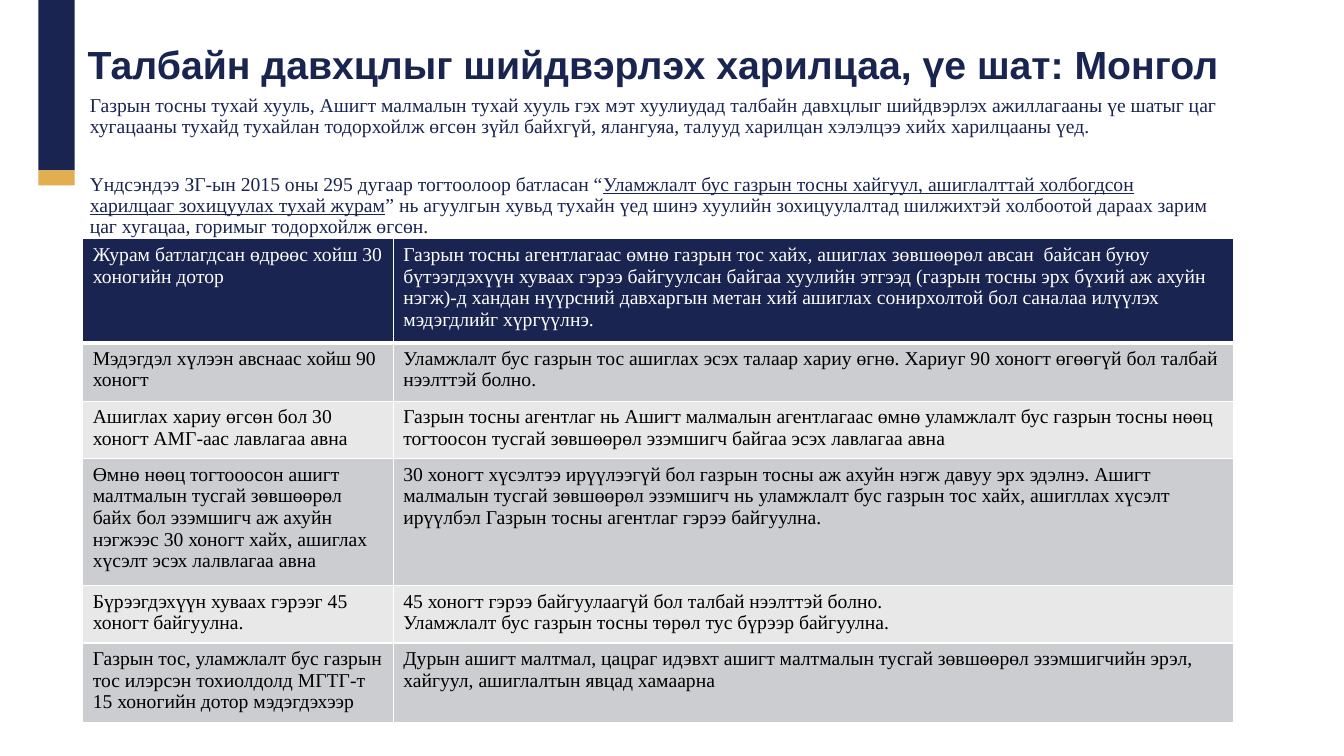
from dataclasses import dataclass

from lxml import etree
from pptx import Presentation
from pptx import util as u
from pptx.dml.color import RGBColor
from pptx.enum import shapes, text
from pptx.oxml import ns


@dataclass(frozen=True)
class Theme:
    navy: str = "192450"
    gold: str = "E3AE50"
    white: str = "FFFFFF"
    black: str = "000000"
    bands: tuple = ("CCCDD0", "E8E8E9")
    heading_font: str = "Arial"
    body_font: str = "Times New Roman"
    heading_size: int = 28
    body_size: int = 14


THEME = Theme()

TITLE = "Талбайн давхцлыг шийдвэрлэх харилцаа, үе шат: Монгол"
INTRO = [
    [("Газрын тосны тухай хууль, Ашигт малмалын тухай хууль гэх мэт хуулиудад талбайн давхцлыг шийдвэрлэх ажиллагааны үе шатыг цаг хугацааны тухайд тухайлан тодорхойлж өгсөн зүйл байхгүй, ялангуяа, талууд харилцан хэлэлцээ хийх харилцааны үед.", False)],
    [("Үндсэндээ ЗГ-ын 2015 оны 295 дугаар тогтоолоор батласан “", False),
     ("Уламжлалт бус газрын тосны хайгуул, ашиглалттай холбогдсон харилцааг зохицуулах тухай журам", True),
     ("” нь агуулгын хувьд тухайн үед шинэ хуулийн зохицуулалтад шилжихтэй холбоотой дараах зарим цаг хугацаа, горимыг тодорхойлж өгсөн.", False)],
]
STAGES = [
    (1.03, "Журам батлагдсан өдрөөс хойш 30 хоногийн дотор",
     ["Газрын тосны агентлагаас өмнө газрын тос хайх, ашиглах зөвшөөрөл авсан  байсан буюу бүтээгдэхүүн хуваах гэрээ байгуулсан байгаа хуулийн этгээд (газрын тосны эрх бүхий аж ахуйн нэгж)-д хандан нүүрсний давхаргын метан хий ашиглах сонирхолтой бол саналаа илүүлэх мэдэгдлийг хүргүүлнэ."]),
    (0.58, "Мэдэгдэл хүлээн авснаас хойш 90 хоногт",
     ["Уламжлалт бус газрын тос ашиглах эсэх талаар хариу өгнө. Хариуг 90 хоногт өгөөгүй бол талбай нээлттэй болно."]),
    (0.57, "Ашиглах хариу өгсөн бол 30 хоногт АМГ-аас лавлагаа авна",
     ["Газрын тосны агентлаг нь Ашигт малмалын агентлагаас өмнө уламжлалт бус газрын тосны нөөц тогтоосон тусгай зөвшөөрөл эзэмшигч байгаа эсэх лавлагаа авна"]),
    (1.26, "Өмнө нөөц тогтооосон ашигт малтмалын тусгай зөвшөөрөл байх бол эзэмшигч аж ахуйн нэгжээс 30 хоногт хайх, ашиглах хүсэлт эсэх лалвлагаа авна",
     ["30 хоногт хүсэлтээ ирүүлээгүй бол газрын тосны аж ахуйн нэгж давуу эрх эдэлнэ. Ашигт малмалын тусгай зөвшөөрөл эзэмшигч нь уламжлалт бус газрын тос хайх, ашигллах хүсэлт ирүүлбэл Газрын тосны агентлаг гэрээ байгуулна."]),
    (0.57, "Бүрээгдэхүүн хуваах гэрээг 45 хоногт байгуулна.",
     ["45 хоногт гэрээ байгуулаагүй бол талбай нээлттэй болно.",
      "Уламжлалт бус газрын тосны төрөл тус бүрээр байгуулна."]),
    (0.79, "Газрын тос, уламжлалт бус газрын тос илэрсэн тохиолдолд МГТГ-т 15 хоногийн дотор мэдэгдэхээр",
     ["Дурын ашигт малтмал, цацраг идэвхт ашигт малтмалын тусгай зөвшөөрөл эзэмшигчийн эрэл, хайгуул, ашиглалтын явцад хамаарна"]),
]


def place(sp, left, top, width, height):
    sp.left, sp.top = u.Inches(left), u.Inches(top)
    sp.width, sp.height = u.Inches(width), u.Inches(height)


def paragraph(tf, index):
    return tf.add_paragraph() if index else tf.paragraphs[0]


def add_run(p, words, color, font=THEME.body_font, size=THEME.body_size, bold=False, underline=False):
    r = p.add_run()
    r.text = words
    r.font.name, r.font.size = font, u.Pt(size)
    r.font.bold, r.font.underline = bold, underline
    r.font.color.rgb = RGBColor.from_string(color)


def add_bar(s, top, height, color):
    box = [u.Inches(v) for v in (0.38, top, 0.36, height)]
    sp = s.shapes.add_shape(shapes.MSO_SHAPE.RECTANGLE, *box)
    sp.shadow.inherit = False
    sp.fill.solid()
    sp.fill.fore_color.rgb = RGBColor.from_string(color)
    sp.line.fill.background()


def set_title(sp):
    place(sp, 0.77, 0.35, 11.55, 0.57)
    tf = sp.text_frame
    tf.word_wrap = False
    tf.auto_size = text.MSO_AUTO_SIZE.NONE
    tf.vertical_anchor = text.MSO_ANCHOR.MIDDLE
    p = tf.paragraphs[0]
    p.alignment = text.PP_ALIGN.LEFT
    add_run(p, TITLE, THEME.navy, THEME.heading_font, THEME.heading_size, bold=True)


def set_intro(sp):
    place(sp, 0.79, 0.9, 11.39, 1.47)
    tf = sp.text_frame
    tf.word_wrap = True
    tf.auto_size = text.MSO_AUTO_SIZE.NONE
    for i, runs in enumerate(INTRO):
        p = paragraph(tf, i)
        p.line_spacing = 0.9
        p.space_before = u.Pt(26 if i else 0)
        pPr = p._p.get_or_add_pPr()
        pPr.set("marL", "0")
        pPr.set("indent", "0")
        etree.SubElement(pPr, ns.qn("a:buNone"))
        for words, underline in runs:
            add_run(p, words, THEME.navy, underline=underline)


def set_borders(cell, top, bottom):
    tcPr = cell._tc.get_or_add_tcPr()
    for side, points in (("L", 1), ("R", 1), ("T", top), ("B", bottom)):
        ln = etree.SubElement(tcPr, ns.qn(f"a:ln{side}"), w=str(u.Pt(points)))
        fill = etree.SubElement(ln, ns.qn("a:solidFill"))
        etree.SubElement(fill, ns.qn("a:srgbClr"), val=THEME.white)


def set_cell(cell, lines, row):
    set_borders(cell, 3 if row == 1 else 1, 3 if row == 0 else 1)
    cell.fill.solid()
    fill = THEME.bands[(row - 1) % 2] if row else THEME.navy
    cell.fill.fore_color.rgb = RGBColor.from_string(fill)
    for i, words in enumerate(lines):
        add_run(paragraph(cell.text_frame, i), words, THEME.black if row else THEME.white)


def add_stages(s):
    box = [u.Inches(v) for v in (0.82, 2.37, 11.42, 4.8)]
    table = s.shapes.add_table(len(STAGES), 2, *box).table
    for column, width in zip(table.columns, (3.08, 8.34)):
        column.width = u.Inches(width)
    for row, (height, deadline, actions) in enumerate(STAGES):
        table.rows[row].height = u.Inches(height)
        set_cell(table.cell(row, 0), [deadline], row)
        set_cell(table.cell(row, 1), actions, row)


def main():
    prs = Presentation()
    prs.slide_width, prs.slide_height = u.Inches(13.33), u.Inches(7.5)
    s = prs.slides.add_slide(prs.slide_layouts[1])
    add_bar(s, 0, 1.69, THEME.navy)
    add_bar(s, 1.69, 0.15, THEME.gold)
    set_intro(s.placeholders[1])
    set_title(s.shapes.title)
    add_stages(s)
    prs.save("out.pptx")


if __name__ == "__main__":
    main()
